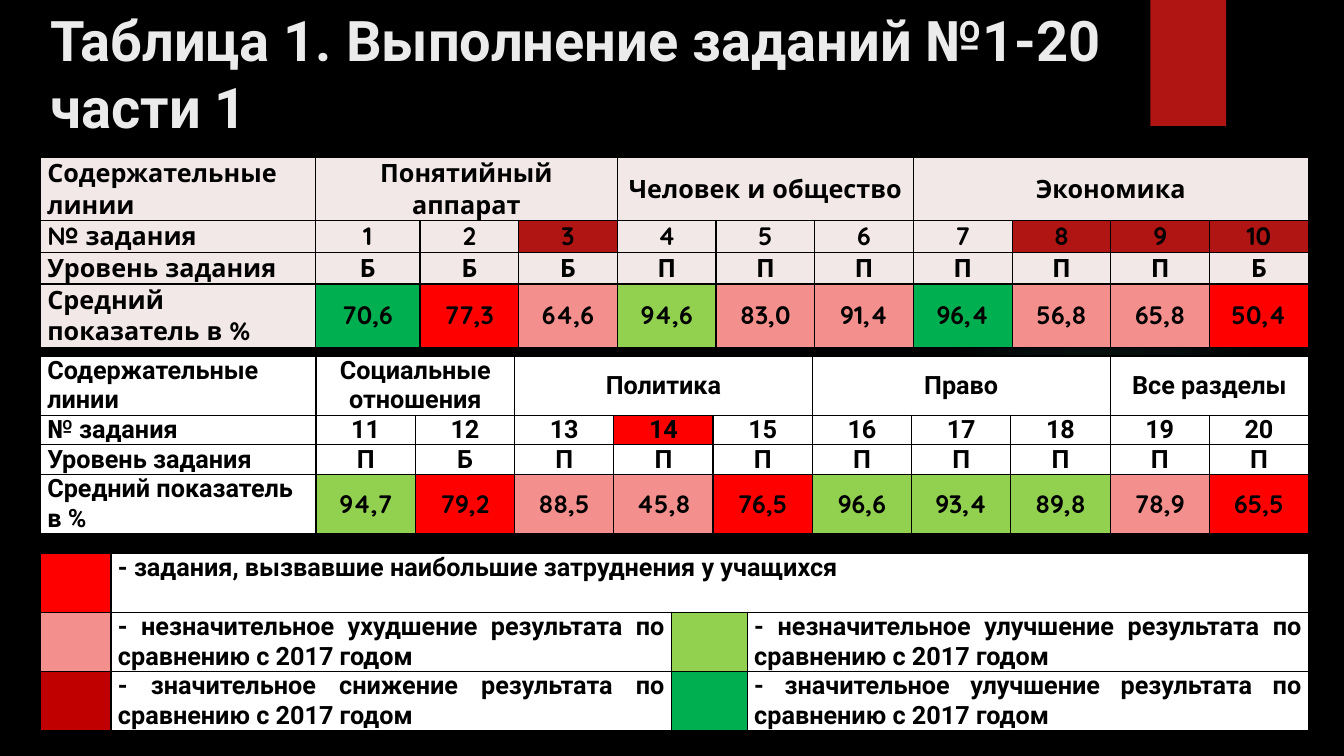
from lxml.etree import SubElement
from pptx import Presentation
from pptx.dml.color import RGBColor
from pptx.enum.shapes import MSO_SHAPE
from pptx.enum.text import MSO_ANCHOR, PP_ALIGN
from pptx.oxml import parse_xml
from pptx.oxml.ns import nsdecls, qn
from pptx.util import Pt

COLORS = {
    "black": "000000", "white": "FFFFFF", "title": "EBEBEB", "accent": "B01513",
    "glow": "50B9C1", "blush": "F2E8E7", "hard": "FF0000", "worse": "F38F8D",
    "much_worse": "C00000", "better": "92D050", "much_better": "00B050",
}
LEFT = 28.8
ROW_LABELS = ["Содержательные линии", "№ задания", "Уровень задания",
              "Средний показатель в %"]


def rgb(name):
    return RGBColor.from_string(COLORS[name])


def add_text(paragraph, text, font, size, color):
    run = paragraph.add_run()
    run.text = text
    run.font.name = font
    run.font.size = Pt(size)
    run.font.bold = True
    run.font.color.rgb = rgb(color)


def add_plain_shape(slide, kind, left, top, width, height, color):
    shape = slide.shapes.add_shape(kind, Pt(left), Pt(top), Pt(width), Pt(height))
    shape.shadow.inherit = False
    shape.fill.solid()
    shape.fill.fore_color.rgb = rgb(color)
    shape.line.fill.background()
    return shape


def add_glow(slide):
    glow = add_plain_shape(slide, MSO_SHAPE.OVAL, 677.5, 131.8, 221.8, 221.8, "glow")
    stops = "".join(
        f'<a:gs pos="{position}000"><a:srgbClr val="{COLORS["glow"]}">'
        f'<a:alpha val="{alpha}000"/></a:srgbClr></a:gs>'
        for position, alpha in [(0, 7), (36, 6), (69, 0), (100, 0)])
    gradient = parse_xml(
        f'<a:gradFill {nsdecls("a")}><a:gsLst>{stops}</a:gsLst><a:path path="circle">'
        '<a:fillToRect l="50000" t="50000" r="50000" b="50000"/></a:path></a:gradFill>')
    properties = glow.fill._xPr
    properties.replace(properties.find(qn("a:solidFill")), gradient)


def add_title(slide, text):
    title = slide.shapes.title
    title.left, title.top, title.width, title.height = Pt(LEFT), Pt(0), Pt(794), Pt(101.5)
    frame = title.text_frame
    frame.word_wrap = True
    frame.vertical_anchor = MSO_ANCHOR.TOP
    paragraph = frame.paragraphs[0]
    paragraph.alignment = PP_ALIGN.LEFT
    paragraph.line_spacing = 1.0
    add_text(paragraph, text, "Roboto", 40, "title")


def add_borders(cell):
    properties = cell._tc.get_or_add_tcPr()
    for position, side in enumerate(["lnL", "lnR", "lnT", "lnB"]):
        line = properties.makeelement(qn(f"a:{side}"), {"w": str(Pt(1))})
        fill = SubElement(line, qn("a:solidFill"))
        SubElement(fill, qn("a:srgbClr"), val=COLORS["black"])
        properties.insert(position, line)


def add_grid(slide, top, widths, heights):
    table = slide.shapes.add_table(
        len(heights), len(widths), Pt(LEFT), Pt(top),
        Pt(sum(widths)), Pt(sum(heights))).table
    table.first_row = table.horz_banding = False
    for column, width in zip(table.columns, widths):
        column.width = Pt(width)
    for row, height in zip(table.rows, heights):
        row.height = Pt(height)
    for cell in table.iter_cells():
        cell.margin_left = cell.margin_right = Pt(5)
        cell.margin_top = cell.margin_bottom = 0
        add_borders(cell)
    return table


def fill_cell(cell, fill, text="", font="Roboto", align=PP_ALIGN.LEFT,
              anchor=MSO_ANCHOR.MIDDLE):
    cell.fill.solid()
    cell.fill.fore_color.rgb = rgb(fill)
    cell.vertical_anchor = anchor
    if text:
        paragraph = cell.text_frame.paragraphs[0]
        paragraph.alignment = align
        add_text(paragraph, text, font, 18, "black")


def add_results(slide, top, widths, heights, base, font, topics, first_task,
                marked, mark, levels, scores):
    table = add_grid(slide, top, widths, heights)
    for row, label in enumerate(ROW_LABELS):
        fill_cell(table.cell(row, 0), base, label, font)

    # Content lines, each spanning its tasks
    column = 1
    for topic, span in topics:
        heading = table.cell(0, column)
        heading.merge(table.cell(0, column + span - 1))
        fill_cell(heading, base, topic, font, PP_ALIGN.CENTER)
        column += span

    # Task number, level and score
    for column, (level, (score, change)) in enumerate(zip(levels, scores), start=1):
        task = first_task + column - 1
        number_fill = mark if task in marked else base
        fill_cell(table.cell(1, column), number_fill, str(task), font, PP_ALIGN.CENTER)
        fill_cell(table.cell(2, column), base, level, font, PP_ALIGN.CENTER)
        fill_cell(table.cell(3, column), change, score, "Quicksand", PP_ALIGN.CENTER)


def add_legend(slide, top, entries):
    table = add_grid(slide, top, [50.5, 400.5, 54, 401], [42] * 3)
    table.cell(0, 1).merge(table.cell(0, 3))
    for row, column, color, meaning in entries:
        fill_cell(table.cell(row, column), color)
        fill_cell(table.cell(row, column + 1), "white", meaning,
                  align=PP_ALIGN.JUSTIFY, anchor=MSO_ANCHOR.TOP)


def main():
    prs = Presentation()
    prs.slide_width, prs.slide_height = Pt(960), Pt(540)
    slide = prs.slides.add_slide(prs.slide_layouts[5])
    slide.background.fill.solid()
    slide.background.fill.fore_color.rgb = rgb("black")

    # Decoration and title
    add_glow(slide)
    add_plain_shape(slide, MSO_SHAPE.RECTANGLE, 821.8, 0, 54, 90, "accent")
    add_title(slide, "Таблица 1. Выполнение заданий №1-20 части 1")

    # Tasks 1-10
    add_results(
        slide, 112.3, [196.5, 74.7] + [70.5] * 9, [45, 22.7, 22.7, 45],
        "blush", "Quicksand",
        [("Понятийный аппарат", 3), ("Человек и общество", 3), ("Экономика", 4)],
        1, {3, 8, 9, 10}, "accent", "БББППППППБ",
        [("70,6", "much_better"), ("77,3", "hard"), ("64,6", "worse"),
         ("94,6", "better"), ("83,0", "worse"), ("91,4", "worse"),
         ("96,4", "much_better"), ("56,8", "worse"), ("65,8", "worse"),
         ("50,4", "hard")])

    # Tasks 11-20
    add_results(
        slide, 254.3, [197] + [70.9] * 10, [42.2, 21.1, 21.1, 42.2],
        "white", "Roboto",
        [("Социальные отношения", 2), ("Политика", 3), ("Право", 3),
         ("Все разделы", 2)],
        11, {14}, "hard", "ПБПППППППП",
        [("94,7", "better"), ("79,2", "hard"), ("88,5", "worse"),
         ("45,8", "worse"), ("76,5", "hard"), ("96,6", "better"),
         ("93,4", "better"), ("89,8", "better"), ("78,9", "worse"),
         ("65,5", "hard")])

    # Colour key
    add_legend(slide, 395.3, [
        (0, 0, "hard", "- задания, вызвавшие наибольшие затруднения у учащихся"),
        (1, 0, "worse", "- незначительное ухудшение результата по сравнению с 2017 годом"),
        (1, 2, "better", "- незначительное улучшение результата по сравнению с 2017 годом"),
        (2, 0, "much_worse", "- значительное снижение результата по сравнению с 2017 годом"),
        (2, 2, "much_better", "- значительное улучшение результата по сравнению с 2017 годом"),
    ])
    prs.save("out.pptx")


if __name__ == "__main__":
    main()
